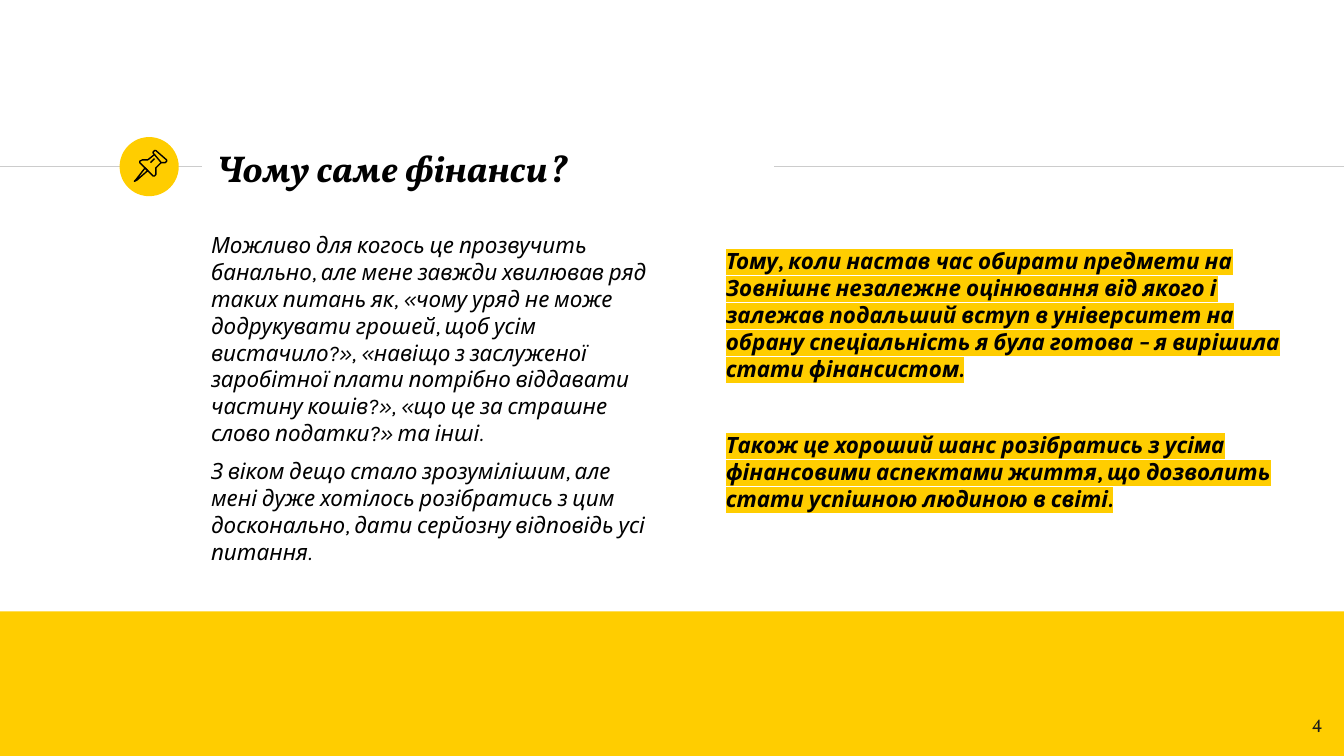
from lxml.etree import SubElement as Sub
from pptx import Presentation
from pptx.dml.color import RGBColor as RGB
from pptx.enum.shapes import MSO_CONNECTOR as Conn, MSO_SHAPE as Shape
from pptx.enum.text import MSO_ANCHOR as Anchor, MSO_AUTO_SIZE as Auto, PP_ALIGN as Align
from pptx.oxml.ns import qn
from pptx.util import Inches, Pt

HUES = {"gold": "FFCD00", "rule": "CCCCCC", "ink": "000000", "page": "1D1D1B"}
HEAD, BODY = "Vollkorn", "Karla"
WIDE = 10
HIGH = WIDE * 9 / 16

WHY = [
    "Можливо для когось це прозвучить банально, але мене завжди хвилював ряд таких питань як, "
    "«чому уряд не може додрукувати грошей, щоб усім вистачило?», «навіщо з заслуженої заробітної "
    "плати потрібно віддавати частину кошів?», «що це за страшне слово податки?» та інші.",
    "З віком дещо стало зрозумілішим, але мені дуже хотілось розібратись з цим досконально, "
    "дати серйозну відповідь усі питання.",
]
THEN = [
    "Тому, коли настав час обирати предмети на Зовнішнє незалежне оцінювання від якого і залежав "
    "подальший вступ в університет на обрану спеціальність я була готова – я вирішила стати фінансистом.",
    "Також це хороший шанс розібратись з усіма фінансовими аспектами життя, "
    "що дозволить стати успішною людиною в світі.",
]
NEEDLE = [(108, 125), (101, 134), (100, 135), (102, 134), (110, 127)]
CAP = [(115, 115), (120, 121), (121, 121), (123, 121), (124, 120), (124, 119),
       (116, 112), (115, 112), (114, 113), (114, 114)]
GRIP = [(115, 115), (110, 119), (108, 119), (106, 119), (104, 120), (104, 121),
        (114, 131), (115, 131), (116, 130), (116, 127), (116, 125), (120, 121)]


def hue(name):
    """Return the named colour."""
    return RGB.from_string(HUES[name])


class Deck:
    """Holds the style and the current slide."""

    def __init__(self):
        """Open a slide with a title and two bodies."""
        self.prs = Presentation()
        self.prs.slide_width, self.prs.slide_height = Inches(WIDE), Inches(HIGH)
        self.slide = self.prs.slides.add_slide(self.prs.slide_layouts[3])
        self.shapes = self.slide.shapes

    def line(self, start, end, color="rule"):
        """Draw a thin straight line."""
        rule = self.shapes.add_connector(Conn.STRAIGHT, *map(Inches, start + end))
        rule.line.color.rgb = hue(color)
        rule.line.width = Pt(0.75)
        Sub(rule._element.spPr, qn("a:effectLst"))

    def block(self, kind, *box):
        """Draw a plain gold shape."""
        shape = self.shapes.add_shape(kind, *map(Inches, box))
        shape.shadow.inherit = False
        shape.fill.solid()
        shape.fill.fore_color.rgb = hue("gold")
        shape.line.fill.background()

    def stroke(self, dots, close=True):
        """Draw an outline from points in hundredths of an inch."""
        form = self.shapes.build_freeform(*dots[0], scale=Inches(0.01))
        form.add_line_segments(dots[1:], close=close)
        shape = form.convert_to_shape()
        shape.shadow.inherit = False
        shape.fill.background()
        shape.line.color.rgb = hue("ink")
        shape.line.width = Pt(0.75)

    def text(self, shape, box, lines, face, size, color="ink", bold=False,
             italic=True, align=Align.LEFT, anchor=Anchor.TOP, gap=0, mark=None):
        """Place a text shape and fill it with paragraphs."""
        shape.left, shape.top, shape.width, shape.height = map(Inches, box)
        frame = shape.text_frame
        frame.word_wrap, frame.auto_size = True, Auto.NONE
        frame.vertical_anchor = anchor
        frame.margin_left = frame.margin_right = Inches(0.1)
        frame.margin_top = frame.margin_bottom = Inches(0.1)
        for i, line in enumerate(lines):
            para = frame.add_paragraph() if i else frame.paragraphs[0]
            run = para.add_run()
            run.text = line
            para.alignment = align
            para.space_before = Pt(gap if i else 0)
            props = para._p.get_or_add_pPr()
            props.set("marL", "0")
            props.set("indent", "0")
            Sub(props, qn("a:buNone"))
            font = para.font
            font.name, font.size, font.bold, font.italic = face, Pt(size), bold, italic
            font.color.rgb = hue(color)
            if mark:
                glow = Sub(run._r.get_or_add_rPr(), qn("a:highlight"))
                Sub(glow, qn("a:srgbClr"), val=HUES[mark])


def main():
    """Build and save the slide."""
    deck = Deck()
    title, left, right = deck.slide.placeholders
    deck.line((0, 1.24), (1.5, 1.24))
    deck.block(Shape.OVAL, 0.89, 1.02, 0.44, 0.44)
    deck.line((5.76, 1.24), (WIDE, 1.24))
    deck.block(Shape.RECTANGLE, 0, 4.55, WIDE, HIGH - 4.55)
    deck.text(title, (1.51, 1.01, 4.24, 0.48), ["Чому саме фінанси?"], HEAD, 20,
              bold=True, anchor=Anchor.MIDDLE)
    deck.stroke(NEEDLE)
    deck.stroke(CAP)
    deck.stroke(GRIP, close=False)
    deck.line((1.12, 1.21), (1.15, 1.18), "ink")
    deck.text(left, (1.47, 1.62, 3.53, 2.64), WHY, BODY, 12, gap=6)
    deck.text(right, (5.3, 1.74, 4.38, 2.15), THEN, BODY, 12, bold=True, gap=26.5, mark="gold")
    page = deck.shapes.add_textbox(0, 0, 0, 0)
    deck.text(page, (9.34, 5.19, 0.6, 0.43), ["4"], HEAD, 10, "page",
              italic=False, align=Align.RIGHT)
    deck.prs.save("out.pptx")


if __name__ == "__main__":
    main()
